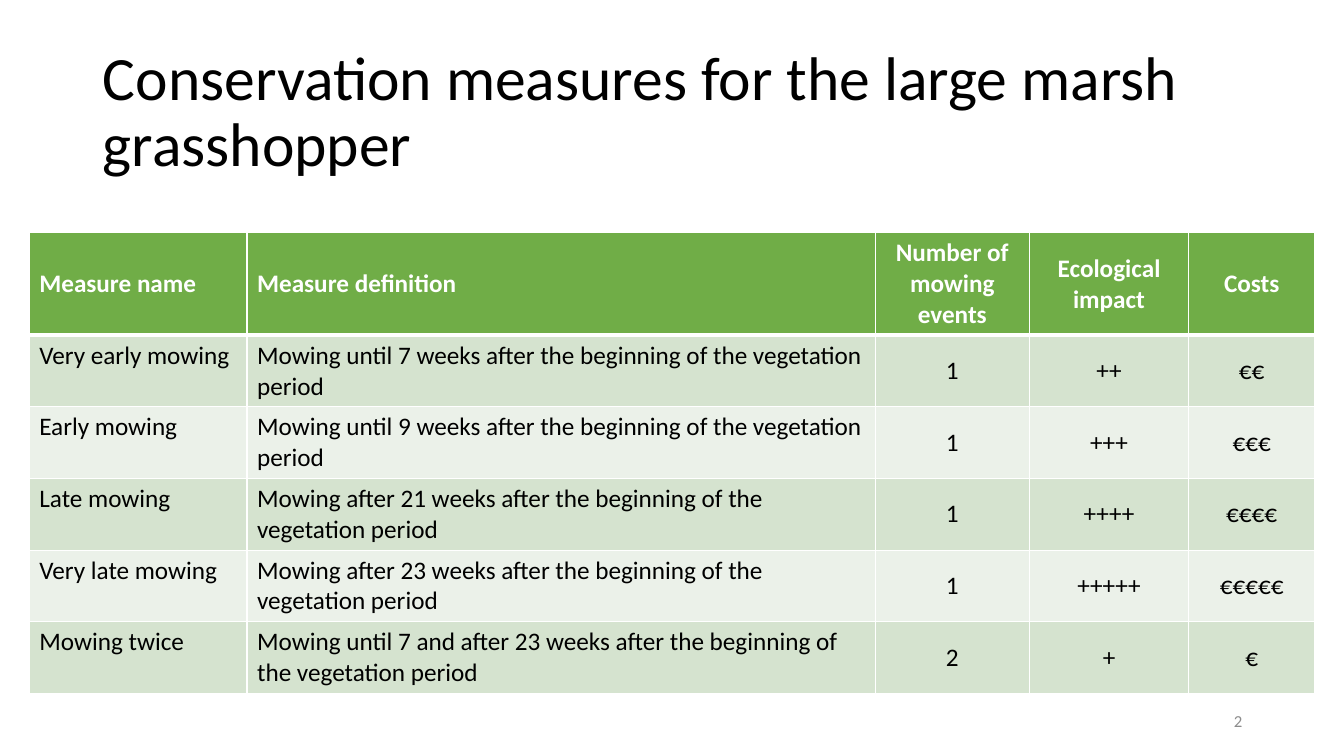
"""Build the slide on conservation measures for the large marsh grasshopper."""
from lxml import etree
from pptx import Presentation
from pptx import util as u
from pptx.dml.color import RGBColor
from pptx.enum import text
from pptx.oxml import ns

PX = 9144
BLACK = RGBColor(0x00, 0x00, 0x00)
WHITE = RGBColor(0xFF, 0xFF, 0xFF)
GRAY = RGBColor(0x8C, 0x8C, 0x8C)
GREEN = RGBColor(0x70, 0xAD, 0x47)
BANDS = [RGBColor(0xEB, 0xF1, 0xE9), RGBColor(0xD5, 0xE3, 0xCF)]
LEFT, MID, RIGHT = text.PP_ALIGN.LEFT, text.PP_ALIGN.CENTER, text.PP_ALIGN.RIGHT
TOP, MIDDLE = text.MSO_ANCHOR.TOP, text.MSO_ANCHOR.MIDDLE


def write(frame, words, size=18, color=BLACK, bold=False, align=LEFT, lead=1.0):
    para = frame.paragraphs[0]
    para.alignment = align
    para.line_spacing = lead
    run = para.add_run()
    run.text = words
    run.font.name = "Calibri"
    run.font.size = u.Pt(size)
    run.font.bold = bold
    run.font.color.rgb = color


def edge(cell, side, width):
    line = etree.SubElement(cell._tc.get_or_add_tcPr(), ns.qn("a:ln" + side), w=str(u.Pt(width)))
    fill = etree.SubElement(line, ns.qn("a:solidFill"))
    etree.SubElement(fill, ns.qn("a:srgbClr"), val=str(WHITE))


deck = Presentation()
deck.slide_width, deck.slide_height = 1333 * PX, 750 * PX
slide = deck.slides.add_slide(deck.slide_layouts[5])

title = slide.shapes.title
title.left, title.top, title.width, title.height = 92 * PX, 40 * PX, 1150 * PX, 145 * PX
title.text_frame.word_wrap = True
title.text_frame.auto_size = text.MSO_AUTO_SIZE.NONE
title.text_frame.vertical_anchor = MIDDLE
write(title.text_frame, "Conservation measures for the large marsh grasshopper", size=44, lead=0.9)

rows = [
    ("Measure name", "Measure definition", "Number of mowing events", "Ecological impact", "Costs"),
    ("Very early mowing", "Mowing until 7 weeks after the beginning of the vegetation period", "1", "++", "€€"),
    ("Early mowing", "Mowing until 9 weeks after the beginning of the vegetation period", "1", "+++", "€€€"),
    ("Late mowing", "Mowing after 21 weeks after the beginning of the vegetation period", "1", "++++", "€€€€"),
    ("Very late mowing", "Mowing after 23 weeks after the beginning of the vegetation period", "1", "+++++", "€€€€€"),
    ("Mowing twice", "Mowing until 7 and after 23 weeks after the beginning of the vegetation period", "2", "+", "€"),
]
widths = [216, 623, 153, 158, 125]
heights = [101] + [71] * 5
table = slide.shapes.add_table(
    len(rows), len(widths), 29 * PX, 231 * PX, sum(widths) * PX, sum(heights) * PX).table
for col, width in zip(table.columns, widths):
    col.width = width * PX
for r, (row, height) in enumerate(zip(rows, heights)):
    table.rows[r].height = height * PX
    head = r == 0
    for c, words in enumerate(row):
        cell = table.cell(r, c)
        for side in "LRTB":
            thick = (r, side) in [(0, "B"), (1, "T")]
            edge(cell, side, 3 if thick else 1)
        cell.fill.solid()
        cell.fill.fore_color.rgb = GREEN if head else BANDS[r % 2]
        cell.vertical_anchor = MIDDLE if head or c > 1 else TOP
        write(cell.text_frame, words, color=WHITE if head else BLACK, bold=head,
              align=MID if c > 1 else LEFT)

page = slide.shapes.add_textbox(942 * PX, 695 * PX, 300 * PX, 40 * PX).text_frame
page.word_wrap = True
page.vertical_anchor = MIDDLE
write(page, "2", size=12, color=GRAY, align=RIGHT)

deck.save("out.pptx")
